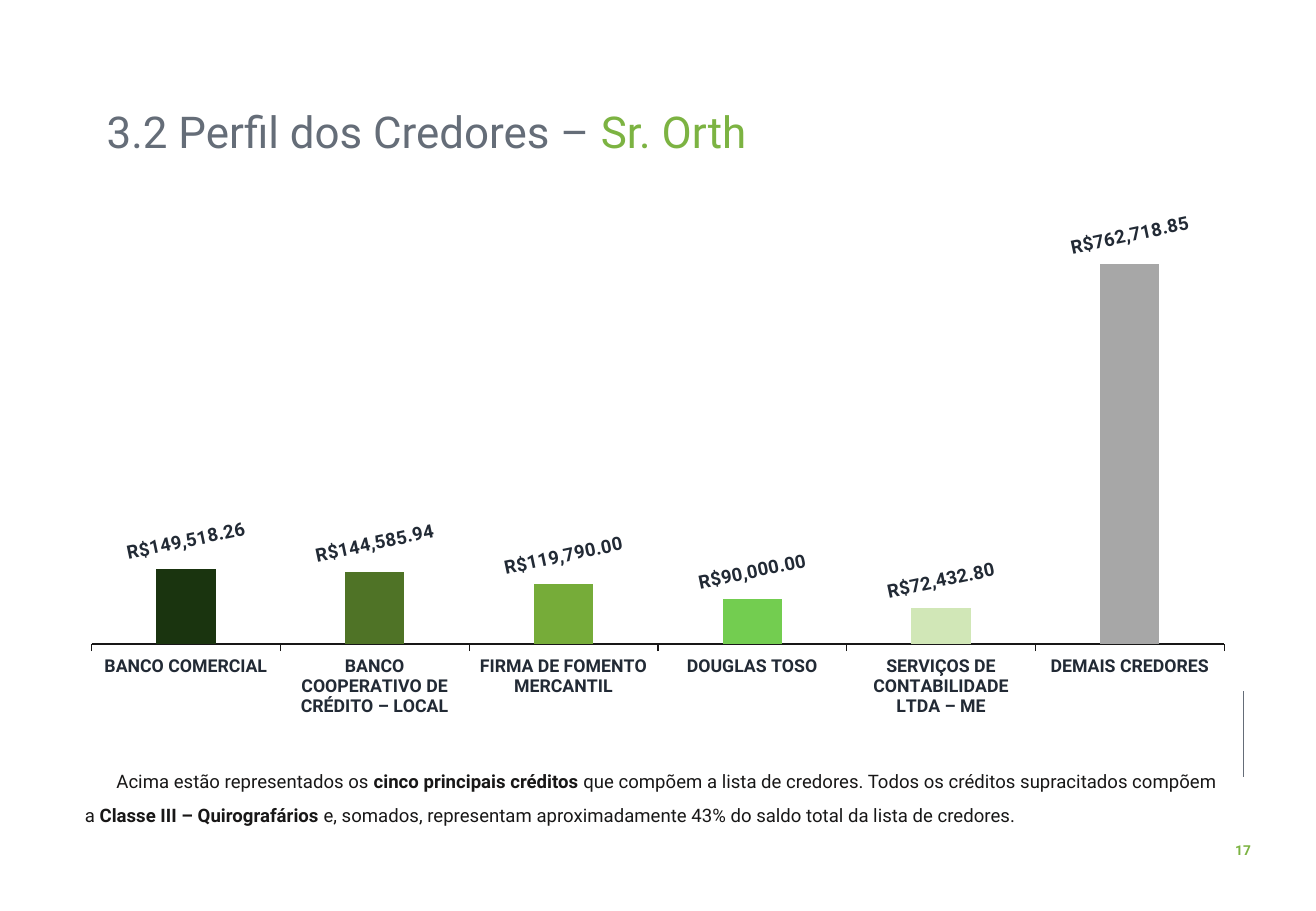
from lxml import etree
from pptx import Presentation
from pptx.chart.data import CategoryChartData
from pptx.dml.color import RGBColor
from pptx.enum.chart import XL_CHART_TYPE, XL_LABEL_POSITION, XL_TICK_MARK
from pptx.enum.shapes import MSO_CONNECTOR
from pptx.enum.text import MSO_AUTO_SIZE, PP_ALIGN
from pptx.oxml.ns import qn
from pptx.util import Inches, Pt

COLUMNS = XL_CHART_TYPE.COLUMN_CLUSTERED
OUTSIDE_END = XL_LABEL_POSITION.OUTSIDE_END
TICK_OUT, TICK_NONE = XL_TICK_MARK.OUTSIDE, XL_TICK_MARK.NONE
STRAIGHT = MSO_CONNECTOR.STRAIGHT
CENTER, LEFT = PP_ALIGN.CENTER, PP_ALIGN.LEFT
NO_AUTOSIZE = MSO_AUTO_SIZE.NONE

FONT = "Roboto"
GREY, GREEN, BLACK, NAVY = "656D78", "7CB342", "181717", "222A35"
MONEY = '"R$"#,##0.00'

# Creditor, amount owed, column colour
CREDITORS = [
    ("BANCO COMERCIAL", 149518.26, "1A340F"),
    ("BANCO COOPERATIVO DE CRÉDITO – LOCAL", 144585.94, "4F7326"),
    ("FIRMA DE FOMENTO MERCANTIL", 119790.00, "76AC39"),
    ("DOUGLAS TOSO", 90000.00, "73CD50"),
    ("SERVIÇOS DE CONTABILIDADE LTDA – ME", 72432.80, "D1E7B7"),
    ("DEMAIS CREDORES", 762718.85, "A7A7A7"),
]


def rgb(value):
    return RGBColor.from_string(value)


def set_font(font, size, color, bold=False):
    for name, value in {"name": FONT, "size": Pt(size), "bold": bold}.items():
        setattr(font, name, value)
    font.color.rgb = rgb(color)


def add_text(page, place, spans, size, wrap=True, align=LEFT, spacing=1.0, indent=0):
    """Add one paragraph; spans hold (text, colour, bold)."""
    box = page.shapes.add_textbox(*map(Inches, place))
    frame = box.text_frame
    frame.auto_size = NO_AUTOSIZE
    frame.word_wrap = wrap
    para = frame.paragraphs[0]
    for name, value in {"alignment": align, "line_spacing": spacing}.items():
        setattr(para, name, value)
    if indent:
        para._p.get_or_add_pPr().set("indent", str(Inches(indent)))
    for text, color, bold in spans:
        span = para.add_run()
        span.text = text
        set_font(span.font, size, color, bold)


def add_line(page, start, end, color, width):
    line = page.shapes.add_connector(STRAIGHT, *map(Inches, start + end))
    line.line.color.rgb = rgb(color)
    line.line.width = Pt(width)
    properties = line._element.spPr
    if properties.find(qn("a:effectLst")) is None:
        etree.SubElement(properties, qn("a:effectLst"))


def place_plot(chart, **fractions):
    """Fix the inner plot area as fractions of the chart."""
    area = chart._chartSpace.chart.plotArea
    layout = area.find(qn("c:layout"))
    if layout is None:
        layout = etree.Element(qn("c:layout"))
        area.insert(0, layout)
    manual = etree.SubElement(layout, qn("c:manualLayout"))
    settings = {"layoutTarget": "inner", "xMode": "edge", "yMode": "edge", **fractions}
    for name, value in settings.items():
        etree.SubElement(manual, qn(f"c:{name}")).set("val", str(value))


def add_creditor_chart(page, place):
    names, amounts, colors = zip(*CREDITORS)
    data = CategoryChartData(number_format=MONEY)
    data.categories = names
    data.add_series("Series 1", amounts)
    chart = page.shapes.add_chart(COLUMNS, *map(Inches, place), data).chart
    chart.has_legend = False
    chart.has_title = False
    set_font(chart.font, 10.5, NAVY, True)
    place_plot(chart, x=0.02, y=0.02, w=0.96, h=0.83)

    # Axes
    names_axis, money_axis = chart.category_axis, chart.value_axis
    names_axis.major_tick_mark = TICK_OUT
    names_axis.minor_tick_mark = TICK_NONE
    names_axis.format.line.color.rgb = rgb(BLACK)
    names_axis.format.line.width = Pt(0.75)
    set_font(names_axis.tick_labels.font, 10.5, NAVY, True)
    for name, value in {
        "visible": False,
        "has_major_gridlines": False,
        "minimum_scale": 0,
        "maximum_scale": 900000,
    }.items():
        setattr(money_axis, name, value)

    # Columns
    plot = chart.plots[0]
    for name, value in {"gap_width": 219, "overlap": -27, "vary_by_categories": False}.items():
        setattr(plot, name, value)
    series = plot.series[0]
    for index, color in enumerate(colors):
        fill = series.points[index].format.fill
        fill.solid()
        fill.fore_color.rgb = rgb(color)

    # Tilted amounts
    labels = series.data_labels
    for name, value in {
        "show_value": True,
        "position": OUTSIDE_END,
        "number_format": MONEY,
        "number_format_is_linked": False,
    }.items():
        setattr(labels, name, value)
    set_font(labels.font, 11, NAVY, True)
    body = labels._element.find(qn("c:txPr")).find(qn("a:bodyPr"))
    body.set("rot", str(-12 * 60000))
    body.set("vert", "horz")


def main():
    deck = Presentation()
    deck.slide_width, deck.slide_height = Inches(10.83), Inches(7.5)
    page = deck.slides.add_slide(deck.slide_layouts[6])

    # Page number and its rule
    add_line(page, (10.23, 5.69), (10.23, 6.4), GREY, 0.5)
    add_text(page, (10.06, 6.88, 0.34, 0.24), [("17", GREEN, True)], 8.1,
             wrap=False, align=CENTER)

    # Title
    add_text(page, (0.78, 0.86, 8.18, 0.53),
             [("3.2 Perfil dos Credores – ", GREY, False), ("Sr. Orth", GREEN, False)],
             26, spacing=0.9)

    # Commentary
    add_text(page, (0.6, 6.2, 9.63, 0.63), [
        ("Acima estão representados os ", BLACK, False),
        ("cinco principais créditos ", BLACK, True),
        ("que compõem a lista de credores. Todos os créditos supracitados compõem a",
         BLACK, False),
        (" Classe III – Quirografários ", BLACK, True),
        ("e, somados, representam aproximadamente 43% do saldo total da lista de credores.",
         BLACK, False),
    ], 11, spacing=1.5, indent=0.26)

    # Chart
    add_creditor_chart(page, (0.56, 1.52, 9.71, 4.45))

    deck.save("out.pptx")


if __name__ == "__main__":
    main()
